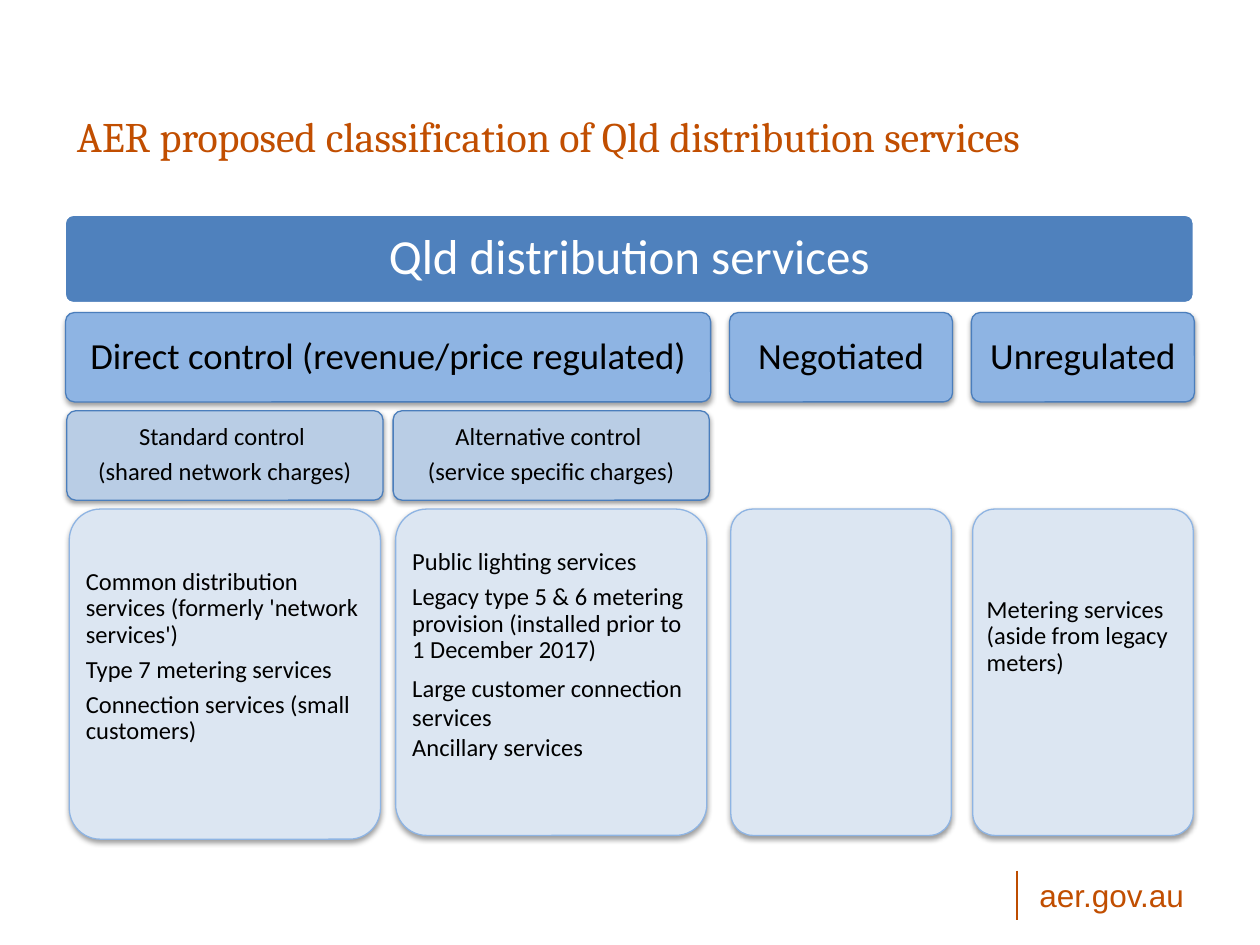
from dataclasses import dataclass

from lxml import etree
from pptx import Presentation
from pptx import util as u
from pptx.dml.color import RGBColor
from pptx.enum import shapes, text
from pptx.oxml.ns import qn


@dataclass(frozen=True)
class Theme:
    """Colours, fonts and type sizes of the slide."""
    accent: str = "C14E00"
    rule: str = "BD4C00"
    white: str = "FFFFFF"
    black: str = "000000"
    banner: str = "4F81BD"
    group: str = "8EB4E3"
    subgroup: str = "B9CDE5"
    detail: str = "DCE6F2"
    edge: str = "4B7EBC"
    heading_font: str = "Cambria"
    body_font: str = "Calibri"
    footer_font: str = "Arial"
    title_size: int = 24
    banner_size: int = 28
    group_size: int = 21
    body_size: int = 14
    footer_size: int = 18


class SlideBuilder:
    """Draws styled elements on one slide."""

    def __init__(self, slide, theme):
        """Keep the slide and its theme."""
        self.s = slide
        self.t = theme

    def format(self, p, font, size, color):
        """Format every run of a paragraph."""
        for r in p.runs:
            r.font.name = font
            r.font.size = u.Pt(size)
            r.font.color.rgb = RGBColor.from_string(color)

    def title(self, words, box):
        """Fill and place the title placeholder."""
        sp = self.s.shapes.title
        sp.left, sp.top, sp.width, sp.height = map(u.Inches, box)
        tf = sp.text_frame
        tf.text = words
        tf.vertical_anchor = text.MSO_ANCHOR.MIDDLE
        p = tf.paragraphs[0]
        p.alignment = text.PP_ALIGN.LEFT
        self.format(p, self.t.heading_font, self.t.title_size, self.t.accent)

    def footer(self, words, box):
        """Add the web address."""
        tf = self.s.shapes.add_textbox(*map(u.Inches, box)).text_frame
        tf.word_wrap = True
        tf.text = words
        self.format(tf.paragraphs[0], self.t.footer_font, self.t.footer_size, self.t.accent)

    def line(self, ends):
        """Add a thin rule without a shadow."""
        sp = self.s.shapes.add_connector(shapes.MSO_CONNECTOR.STRAIGHT, *map(u.Inches, ends))
        sp.line.color.rgb = RGBColor.from_string(self.t.rule)
        sp.line.width = u.Pt(1)
        etree.SubElement(sp._element.spPr, qn("a:effectLst"))

    def shadow(self, sp):
        """Give a shape a soft shadow below it."""
        effects = sp._element.spPr.find(qn("a:effectLst"))
        outer = etree.SubElement(effects, qn("a:outerShdw"), blurRad=str(u.Pt(3.1)),
                                 dist=str(u.Pt(1.6)), dir="5400000", rotWithShape="0")
        color = etree.SubElement(outer, qn("a:srgbClr"), val=self.t.black)
        etree.SubElement(color, qn("a:alpha"), val="38000")

    def box(self, box, fill, edge, lines=(), size=14, color="000000", centred=True,
            inset=0.06, lift=0, edge_width=0.75, raised=True):
        """Add a rounded box, with its text raised by a lift."""
        sp = self.s.shapes.add_shape(shapes.MSO_SHAPE.ROUNDED_RECTANGLE, *map(u.Inches, box))
        sp.adjustments[0] = 0.1
        sp.fill.solid()
        sp.fill.fore_color.rgb = RGBColor.from_string(fill)
        sp.line.color.rgb = RGBColor.from_string(edge)
        sp.line.width = u.Pt(edge_width)
        sp.shadow.inherit = False
        if raised:
            self.shadow(sp)
        if not lines:
            return None
        tf = sp.text_frame
        tf.word_wrap = True
        tf.vertical_anchor = text.MSO_ANCHOR.MIDDLE
        tf.margin_left = tf.margin_right = u.Inches(inset)
        tf.margin_top = u.Inches(0.06)
        tf.margin_bottom = u.Inches(0.06 + lift)
        tf.text = "\n".join(lines)
        for p in tf.paragraphs:
            p.alignment = text.PP_ALIGN.CENTER if centred else text.PP_ALIGN.LEFT
            p.line_spacing = 0.9
            p.space_after = u.Pt(size * 0.35)
            self.format(p, self.t.body_font, size, color)
        return tf


def main():
    """Build and save the slide."""
    prs = Presentation()
    prs.slide_width, prs.slide_height = u.Inches(10), u.Inches(7.5)
    t = Theme()
    s = SlideBuilder(prs.slides.add_slide(prs.slide_layouts[5]), t)

    s.line((8.07, 6.91, 8.07, 7.3))
    s.footer("aer.gov.au", (8.15, 6.9, 1.57, 0.4))
    s.title("AER proposed classification of Qld distribution services", (0.51, 0.6, 8.98, 0.95))

    height = 0.71
    banner_y, group_y, subgroup_y, detail_y = (1.7 + 0.78 * row for row in range(4))
    s.box((0.51, banner_y, 8.97, height), t.banner, t.white, ["Qld distribution services"],
          t.banner_size, t.white, edge_width=2, raised=False)

    groups = [
        (0.52, 5.12, "Direct control (revenue/price regulated)"),
        (5.79, 1.77, "Negotiated"),
        (7.71, 1.77, "Unregulated"),
    ]
    for x, width, name in groups:
        s.box((x, group_y, width, height), t.group, t.edge, [name], t.group_size, inset=0.09)

    subgroups = [
        (0.53, ["Standard control ", "(shared network charges)"]),
        (3.12, ["Alternative control ", "(service specific charges)"]),
    ]
    for x, lines in subgroups:
        s.box((x, subgroup_y, 2.51, height), t.subgroup, t.edge, lines, t.body_size)

    details = [
        (0.55, 2.47, 2.62, 0.27, [
            "Common distribution services (formerly 'network services')",
            "Type 7 metering services",
            "Connection services (small customers)",
        ]),
        (3.14, 2.47, 2.59, 0.27, [
            "Public lighting services",
            "Legacy type 5 & 6 metering provision (installed prior to 1 December 2017)",
            "Large customer connection services",
            "Ancillary services",
        ]),
        (5.8, 1.75, 2.59, 0, []),
        (7.72, 1.75, 2.59, 0.56, ["Metering services (aside from legacy meters)"]),
    ]
    for x, width, depth, lift, lines in details:
        tf = s.box((x, detail_y, width, depth), t.detail, t.group, lines, t.body_size,
                   centred=False, lift=lift)
        if len(lines) == 4:
            for p in tf.paragraphs[2:]:
                p.line_spacing = 1.0
                p.space_after = u.Pt(0)

    prs.save("out.pptx")


if __name__ == "__main__":
    main()
